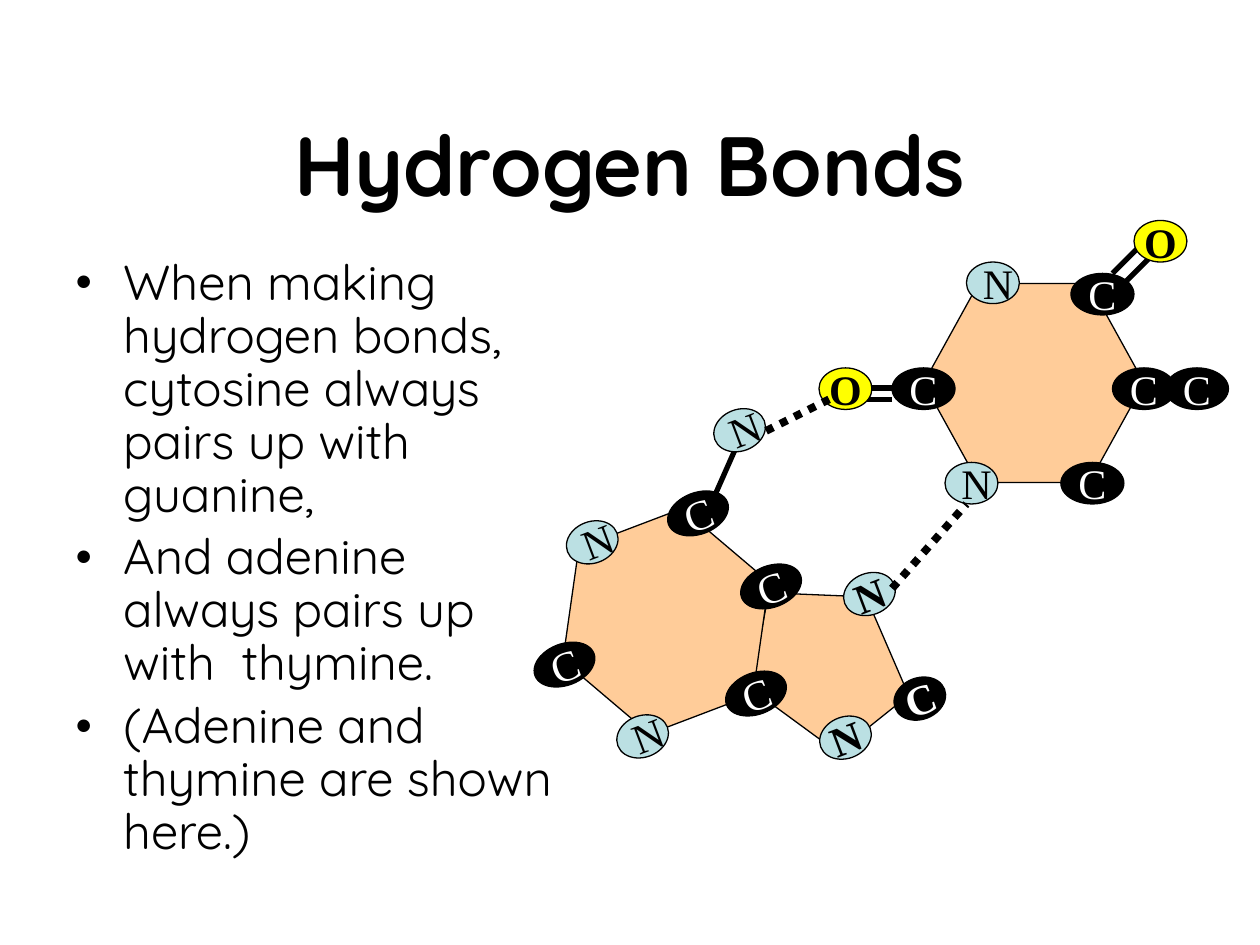
from lxml import etree
from pptx import Presentation
from pptx.dml.color import RGBColor
from pptx.enum.dml import MSO_LINE
from pptx.enum.shapes import MSO_CONNECTOR, MSO_SHAPE
from pptx.enum.text import MSO_ANCHOR, PP_ALIGN
from pptx.oxml.ns import qn
from pptx.util import Inches, Pt

CENTER, LEFT = PP_ALIGN.CENTER, PP_ALIGN.LEFT
MIDDLE, TOP = MSO_ANCHOR.MIDDLE, MSO_ANCHOR.TOP
ELLIPSE, HEXAGON, PENTAGON = MSO_SHAPE.OVAL, MSO_SHAPE.HEXAGON, MSO_SHAPE.REGULAR_PENTAGON
STRAIGHT = MSO_CONNECTOR.STRAIGHT
SQUARE_DOT = MSO_LINE.ROUND_DOT  # written to the file as sysDot

BLACK = RGBColor(0x00, 0x00, 0x00)
WHITE = RGBColor(0xFF, 0xFF, 0xFF)
PEACH = RGBColor(0xFF, 0xCC, 0x99)
PALE_BLUE = RGBColor(0xBB, 0xE0, 0xE3)
YELLOW = RGBColor(0xFF, 0xFF, 0x00)

TILT = 339.2  # rotation of the adenine molecule
ATOM_HEIGHT = 0.33


def write_text(shape, text, font="Times New Roman", size=24, color=BLACK, bold=False,
               align=CENTER, anchor=MIDDLE, wrap=False, bullet=False):
    """Write one paragraph per line of text."""
    frame = shape.text_frame
    frame.word_wrap = wrap
    frame.vertical_anchor = anchor
    frame.text = text
    for index, paragraph in enumerate(frame.paragraphs):
        paragraph.alignment = align
        if bullet:
            paragraph.line_spacing = 0.9
            if index:
                paragraph.space_before = Pt(5.6)
            properties = paragraph._p.get_or_add_pPr()
            properties.set("marL", str(Inches(0.38)))
            properties.set("indent", str(Inches(-0.38)))
            etree.SubElement(properties, qn("a:buFont")).set("typeface", font)
            etree.SubElement(properties, qn("a:buChar")).set("char", "•")
        paragraph.font.name = font
        paragraph.font.size = Pt(size)
        paragraph.font.bold = bold
        paragraph.font.color.rgb = color


def add_outlined(kind, left, top, width, height, fill, rotation=0):
    """Add a filled shape with a thin black outline."""
    shape = slide.shapes.add_shape(kind, Inches(left), Inches(top), Inches(width), Inches(height))
    shape.shadow.inherit = False
    shape.rotation = rotation
    shape.fill.solid()
    shape.fill.fore_color.rgb = fill
    shape.line.color.rgb = BLACK
    shape.line.width = Pt(0.75)
    return shape


presentation = Presentation()
presentation.slide_width = Inches(10)
presentation.slide_height = Inches(7.5)
slide = presentation.slides.add_slide(presentation.slide_layouts[6])

# Title
title = slide.shapes.add_textbox(Inches(0.75), Inches(0.67), Inches(8.5), Inches(1.25))
write_text(title, "Hydrogen Bonds", font="Quicksand", size=48, bold=True, wrap=True)

# Bullet list, with a wider right margin to keep clear of the molecule
body = slide.shapes.add_textbox(Inches(0.5), Inches(2), Inches(4.17), Inches(4.5))
body.text_frame.margin_right = Inches(0.2)
write_text(body, "When making hydrogen bonds, cytosine always pairs up with guanine,\n"
                 "And adenine always pairs up with  thymine.\n"
                 "(Adenine and thymine are shown here.)",
           font="Quicksand", size=28, align=LEFT, anchor=TOP, wrap=True, bullet=True)

# Rings: adenine's pentagon and hexagon, thymine's hexagon
add_outlined(PENTAGON, 5.93, 4.56, 1.17, 1.33, PEACH, 321.4)
for left, top, rotation in [(4.41, 4.14, TILT), (7.33, 2.25, 0)]:
    ring = add_outlined(HEXAGON, left, top, 1.75, 1.58, PEACH, rotation)
    ring.adjustments[0] = 0.276

# Bonds: solid inside a molecule, dotted hydrogen bonds between the two
bonds = [
    (5.67, 3.94, 5.86, 3.51, False),
    (8.92, 2.25, 9.25, 1.92, False),
    (8.83, 2.17, 9.17, 1.83, False),
    (7.08, 3.17, 6.83, 3.17, False),
    (7.08, 3.08, 6.83, 3.08, False),
    (6.08, 3.42, 6.58, 3.17, True),
    (7.08, 4.67, 7.67, 4.00, True),
]

# Atoms: width, fill and text colour by label
atom_styles = {
    "C": (0.50, BLACK, WHITE),
    "N": (0.42, PALE_BLUE, BLACK),
    " N": (0.42, PALE_BLUE, BLACK),
    "O": (0.42, YELLOW, BLACK),
}
adenine_hexagon = [
    ("C", 5.29, 3.91), ("C", 5.87, 4.49), ("C", 5.75, 5.34), ("C", 4.23, 5.11),
    (" N", 4.49, 4.14), (" N", 4.89, 5.68), (" N", 5.66, 3.25),
]
adenine_pentagon = [("N", 6.5, 5.69), ("N", 6.69, 4.55), ("C", 7.09, 5.38)]
thymine_ring = [
    ("C", 8.5, 2.17), ("C", 8.83, 2.92), ("C", 8.42, 3.67), ("C", 7.08, 2.92),
    (" N", 7.67, 2.08), (" N", 7.5, 3.67), ("C", 9.25, 2.92),
]
thymine_oxygens = [("O", 6.5, 2.92), ("O", 9, 1.75)]
atom_groups = [
    (adenine_hexagon, TILT, False),
    (adenine_pentagon, TILT, True),
    (thymine_ring, 0, False),
    (thymine_oxygens, 0, True),
]

# Solid bonds lie under the atoms, hydrogen bonds over them
for dotted_layer in (False, True):
    for x1, y1, x2, y2, dotted in bonds:
        if dotted != dotted_layer:
            continue
        bond = slide.shapes.add_connector(STRAIGHT, Inches(x1), Inches(y1), Inches(x2), Inches(y2))
        bond.line.color.rgb = BLACK
        bond.line.width = Pt(4.5 if dotted else 3)
        if dotted:
            bond.line.dash_style = SQUARE_DOT
        etree.SubElement(bond._element.spPr, qn("a:effectLst"))
    if dotted_layer:
        continue
    for atoms, rotation, bold in atom_groups:
        for label, left, top in atoms:
            width, fill, color = atom_styles[label]
            if bold:
                width = 0.42
            atom = add_outlined(ELLIPSE, left, top, width, ATOM_HEIGHT, fill, rotation)
            write_text(atom, label, color=color, bold=bold)

presentation.save("out.pptx")
